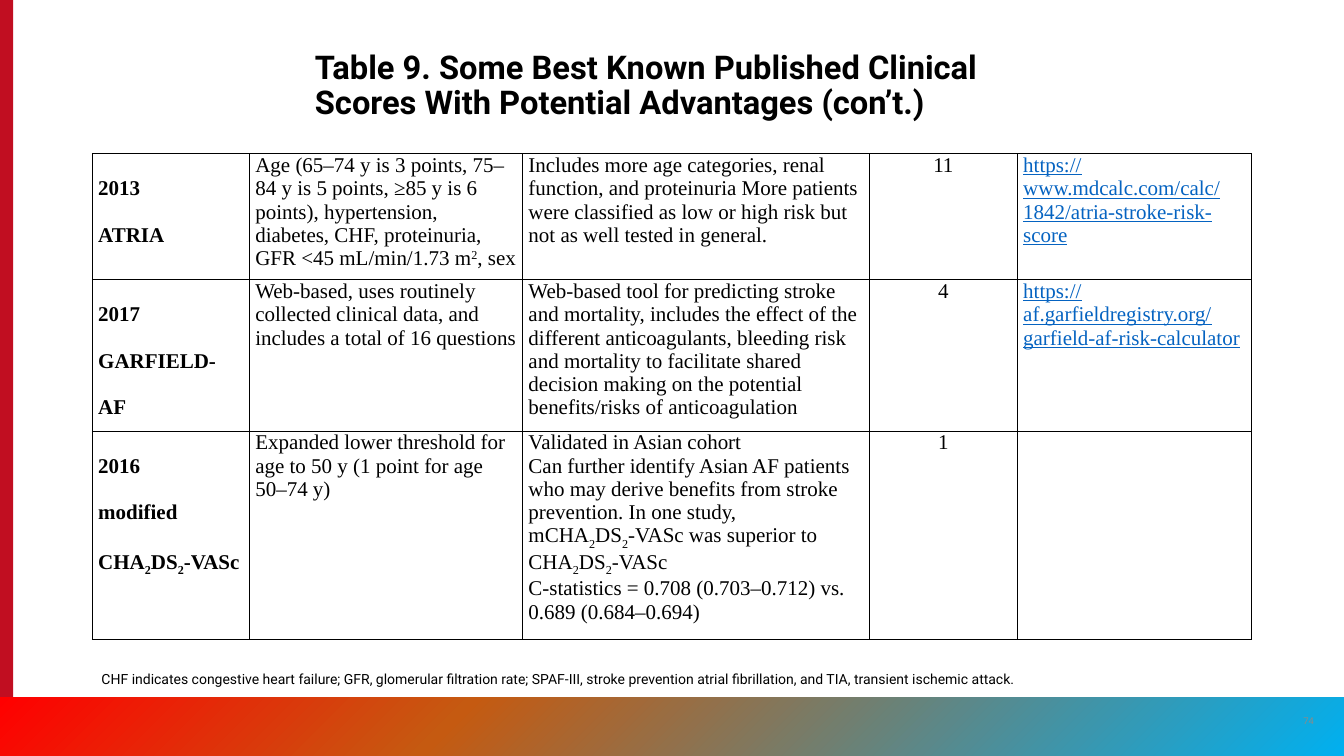
"""Builds the slide with the continued table of clinical risk scores."""
from copy import deepcopy

from lxml import etree
from pptx import Presentation
from pptx.dml.color import RGBColor
from pptx.enum.shapes import MSO_SHAPE
from pptx.enum.text import MSO_ANCHOR, MSO_AUTO_SIZE, PP_ALIGN
from pptx.oxml.ns import qn
from pptx.util import Cm, Pt

RECTANGLE = MSO_SHAPE.RECTANGLE
TOP, MIDDLE, BOTTOM = MSO_ANCHOR.TOP, MSO_ANCHOR.MIDDLE, MSO_ANCHOR.BOTTOM
LEFT, CENTER = PP_ALIGN.LEFT, PP_ALIGN.CENTER
NO_AUTOFIT = MSO_AUTO_SIZE.NONE

COLORS = {
    "black": "000000",
    "red_bar": "C10E21",
    "gray": "8A8B8A",
    "link": "0563C1",
    "red": "FF0000",
    "orange": "C55A11",
    "blue": "00B0F0",
}
SANS, SERIF = "Roboto", "Times New Roman"
BASELINES = {"^": "30000", "_": "-25000"}

FOOTER_STOPS = [(0, "red"), (0.34, "orange"), (1, "blue")]
COLUMN_WIDTHS = [4.75, 8.26, 10.49, 4.47, 7.08]
ROW_HEIGHTS = [3.5, 4.2, 5.84]
NAME_COLUMN, COUNT_COLUMN, LINK_COLUMN = 0, 3, 4

TITLE = ("Table 9. Some Best Known Published Clinical Scores "
         "With Potential Advantages (con’t.)")
ABBREVIATIONS = (
    "CHF indicates congestive heart failure; GFR, glomerular filtration rate; "
    "SPAF-III, stroke prevention atrial fibrillation, and TIA, "
    "transient ischemic attack.")
SCORES = [
    [["2013", "ATRIA"],
     ["Age (65–74 y is 3 points, 75–84 y is 5 points, ≥85 y is 6 points), "
      "hypertension, diabetes, CHF, proteinuria, "
      "GFR <45 mL/min/1.73 m|^2|, sex"],
     ["Includes more age categories, renal function, and proteinuria More "
      "patients were classified as low or high risk but not as well tested "
      "in general."],
     ["11"],
     ["https://www.mdcalc.com/calc/1842/atria-stroke-risk-score"]],
    [["2017", "GARFIELD-AF"],
     ["Web-based, uses routinely collected clinical data, and includes a "
      "total of 16 questions"],
     ["Web-based tool for predicting stroke and mortality, includes the "
      "effect of the different anticoagulants, bleeding risk and mortality "
      "to facilitate shared decision making on the potential benefits/risks "
      "of anticoagulation"],
     ["4"],
     ["https://af.garfieldregistry.org/garfield-af-risk-calculator"]],
    [["2016", "modified CHA|_2|DS|_2|-VASc"],
     ["Expanded lower threshold for age to 50 y (1 point for age 50–74 y)"],
     ["Validated in Asian cohort",
      "Can further identify Asian AF patients who may derive benefits from "
      "stroke prevention. In one study,",
      "mCHA|_2|DS|_2|-VASc was superior to CHA|_2|DS|_2|-VASc",
      "C-statistics = 0.708 (0.703–0.712) vs. 0.689 (0.684–0.694)"],
     ["1"],
     []],
]


def rgb(name):
    """Return a named colour."""
    return RGBColor.from_string(COLORS[name])


def set_font(p, name, size, color="black", bold=False):
    """Format the text of a paragraph."""
    font = p.font
    font.name, font.size, font.bold = name, Pt(size), bold
    font.color.rgb = rgb(color)


def add_rectangle(sp, x, y, w, h):
    """Add a rectangle without outline or shadow."""
    s = sp.add_shape(RECTANGLE, Cm(x), Cm(y), Cm(w), Cm(h))
    s.shadow.inherit = False
    s.line.fill.background()
    return s


def add_bars(sp):
    """Add the red side bar and the gradient footer bar."""
    side = add_rectangle(sp, 0, 0, 0.4, 22.86)
    side.fill.solid()
    side.fill.fore_color.rgb = rgb("red_bar")
    footer = add_rectangle(sp, 0, 21.08, 40.64, 1.78)
    footer.fill.gradient()
    footer.fill.gradient_angle = 315
    stops = footer._element.spPr.find(".//" + qn("a:gsLst"))
    stops.append(deepcopy(stops[0]))
    for stop, (position, color) in zip(footer.fill.gradient_stops,
                                       FOOTER_STOPS):
        stop.position = position
        stop.color.rgb = rgb(color)


def set_title(s):
    """Place and format the title."""
    s.left, s.top, s.width, s.height = Cm(9.27), Cm(1.27), Cm(22.1), Cm(2.54)
    tf = s.text_frame
    tf.text = TITLE
    tf.word_wrap = True
    tf.auto_size = NO_AUTOFIT
    tf.vertical_anchor = BOTTOM
    p = tf.paragraphs[0]
    p.alignment, p.line_spacing = LEFT, 0.9
    set_font(p, SANS, 28, bold=True)


def add_text(sp, text, box, size, color="black", align=LEFT, anchor=TOP):
    """Add a text box with one paragraph."""
    tf = sp.add_textbox(*map(Cm, box)).text_frame
    tf.word_wrap = True
    tf.vertical_anchor = anchor
    p = tf.paragraphs[0]
    p.text, p.alignment = text, align
    set_font(p, SANS, size, color)


def add_runs(p, text):
    """Add text whose marked pieces are raised or lowered."""
    for i, piece in enumerate(text.split("|")):
        r = p.add_run()
        r.text = piece[1:] if i % 2 else piece
        if i % 2:
            r._r.get_or_add_rPr().set("baseline", BASELINES[piece[0]])


def set_borders(cell):
    """Draw thin black lines on all sides of a cell."""
    tc_pr = cell._tc.get_or_add_tcPr()
    for i, side in enumerate("LRTB"):
        ln = etree.Element(qn(f"a:ln{side}"), w=str(Pt(1)))
        fill = etree.SubElement(ln, qn("a:solidFill"))
        etree.SubElement(fill, qn("a:srgbClr"), val=COLORS["black"])
        tc_pr.insert(i, ln)


def fill_cell(cell, texts, column):
    """Write the paragraphs of a cell in the style of its column."""
    cell.margin_left = cell.margin_right = Cm(0.18)
    cell.margin_top = cell.margin_bottom = 0
    cell.fill.background()
    set_borders(cell)
    tf = cell.text_frame
    for i, text in enumerate(texts):
        p = tf.add_paragraph() if i else tf.paragraphs[0]
        add_runs(p, text)
        p.alignment = CENTER if column == COUNT_COLUMN else LEFT
        is_name, is_link = column == NAME_COLUMN, column == LINK_COLUMN
        p.line_spacing = 2.0 if is_name else 1.0
        set_font(p, SERIF, 18, "link" if is_link else "black", is_name)
        p.font.underline = is_link


def add_score_table(sp):
    """Add the table of clinical scores."""
    table = sp.add_table(len(SCORES), len(COLUMN_WIDTHS), Cm(2.79), Cm(4.65),
                         Cm(sum(COLUMN_WIDTHS)), Cm(sum(ROW_HEIGHTS))).table
    table.first_row = table.horz_banding = False
    for column, width in zip(table.columns, COLUMN_WIDTHS):
        column.width = Cm(width)
    for row, height, score in zip(table.rows, ROW_HEIGHTS, SCORES):
        row.height = Cm(height)
        for i, (cell, texts) in enumerate(zip(row.cells, score)):
            fill_cell(cell, texts, i)


def main():
    """Build and save the slide."""
    prs = Presentation()
    prs.slide_width, prs.slide_height = Cm(40.64), Cm(22.86)
    slide = prs.slides.add_slide(prs.slide_layouts[5])
    sp = slide.shapes
    add_bars(sp)
    set_title(sp.title)
    add_text(sp, "74", (38.96, 21.18, 1.22, 1.22), 8, "gray", CENTER, MIDDLE)
    add_score_table(sp)
    add_text(sp, ABBREVIATIONS, (2.82, 20.14, 32.18, 0.77), 12)
    prs.save("out.pptx")


if __name__ == "__main__":
    main()
